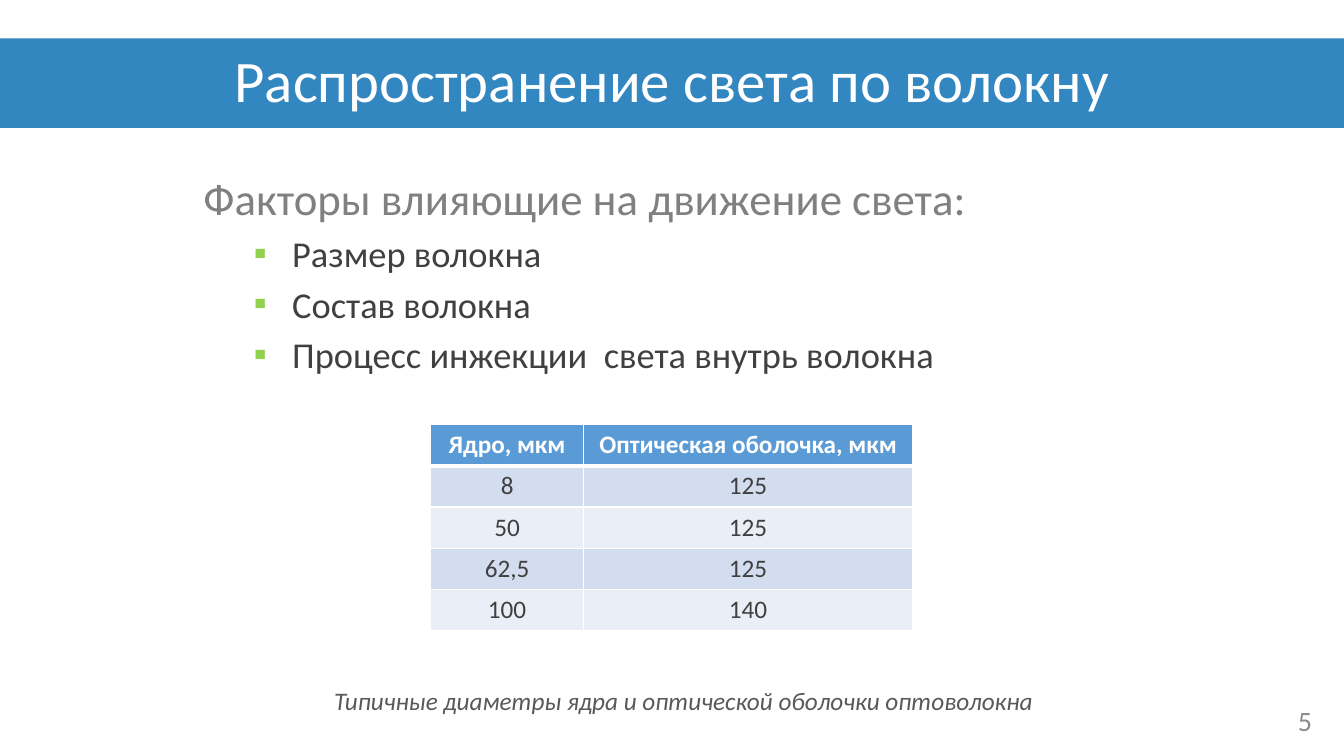
"""Build the slide on how light travels through optical fibre."""
from dataclasses import dataclass

from lxml import etree
from pptx import Presentation
from pptx.dml.color import RGBColor
from pptx.enum import shapes, text
from pptx.oxml import ns
from pptx.util import Inches, Pt

ALIGN = text.PP_ALIGN
ANCHOR = text.MSO_ANCHOR


@dataclass(frozen=True)
class Style:
    size: int
    color: str
    bold: bool = False
    italic: bool = False
    align: ALIGN = ALIGN.LEFT
    before: int = 0
    spacing: float = 1.0
    bullet: str = ""


@dataclass(frozen=True)
class Block:
    left: float
    top: float
    width: float
    height: float
    style: Style
    lines: tuple[str, ...]
    anchor: ANCHOR = ANCHOR.TOP
    fill: str = ""


HEADING = Style(32, "808080", before=10)
FACTOR = Style(26, "404040", before=5, bullet="▪")
TITLE = Style(42, "FFFFFF", align=ALIGN.CENTER, spacing=0.9)
NUMBER = Style(20, "8C8C8C", align=ALIGN.RIGHT)
CAPTION = Style(18, "595959", italic=True, align=ALIGN.CENTER)
HEADER_CELL = Style(18, "FFFFFF", bold=True, align=ALIGN.CENTER)
BODY_CELL = Style(18, "404040", align=ALIGN.CENTER)

FACTORS = ("Размер волокна", "Состав волокна", "Процесс инжекции  света внутрь волокна")
BODY = Block(1.92, 1.64, 9.97, 2.81, HEADING, ("Факторы влияющие на движение света:",))
BLOCKS = (
    Block(9.42, 6.95, 3.69, 0.4, NUMBER, ("5",), ANCHOR.MIDDLE),
    Block(0, 0.38, 13.33, 0.89, TITLE, ("Распространение света по волокну",),
          ANCHOR.MIDDLE, "3387C1"),
    Block(1.79, 6.75, 9.98, 0.4, CAPTION,
          ("Типичные диаметры ядра и оптической оболочки оптоволокна",)),
)
DIAMETERS = (
    ("Ядро, мкм", "Оптическая оболочка, мкм"),
    ("8", "125"),
    ("50", "125"),
    ("62,5", "125"),
    ("100", "140"),
)
COLUMN_WIDTHS = (1.52, 3.26)
ROW_HEIGHT = 0.41
BAND_FILLS = ("EAEFF7", "D2DEEF")


def rgb(value: str) -> RGBColor:
    return RGBColor.from_string(value)


def add_bullet(para, char: str) -> None:
    props = para._p.get_or_add_pPr()
    props.set("marL", str(Inches(0.88)))
    props.set("indent", str(Inches(-0.38)))
    color = etree.SubElement(props, ns.qn("a:buClr"))
    etree.SubElement(color, ns.qn("a:srgbClr"), val="92D050")
    etree.SubElement(props, ns.qn("a:buFont"), typeface="Calibri")
    etree.SubElement(props, ns.qn("a:buChar"), char=char)


def write(para, line: str, style: Style) -> None:
    para.alignment = style.align
    para.space_before = Pt(style.before)
    para.line_spacing = style.spacing
    if style.bullet:
        para.level = 1
        add_bullet(para, style.bullet)
    span = para.add_run()
    span.text = line
    span.font.name = "Calibri"
    span.font.size = Pt(style.size)
    span.font.bold = style.bold
    span.font.italic = style.italic
    span.font.color.rgb = rgb(style.color)


def add_block(page, block: Block):
    place = [Inches(n) for n in (block.left, block.top, block.width, block.height)]
    if block.fill:
        box = page.shapes.add_shape(shapes.MSO_SHAPE.RECTANGLE, *place)
        box.shadow.inherit = False
        box.fill.solid()
        box.fill.fore_color.rgb = rgb(block.fill)
        box.line.fill.background()
    else:
        box = page.shapes.add_textbox(*place)
    frame = box.text_frame
    frame.word_wrap = True
    frame.vertical_anchor = block.anchor
    for index, line in enumerate(block.lines):
        para = frame.add_paragraph() if index else frame.paragraphs[0]
        write(para, line, block.style)
    return frame


def set_borders(cell, bottom: int) -> None:
    props = cell._tc.get_or_add_tcPr()
    widths = {"a:lnL": 1, "a:lnR": 1, "a:lnT": 1, "a:lnB": bottom}
    for index, (tag, width) in enumerate(widths.items()):
        line = etree.Element(ns.qn(tag), w=str(Pt(width)))
        fill = etree.SubElement(line, ns.qn("a:solidFill"))
        etree.SubElement(fill, ns.qn("a:srgbClr"), val="FFFFFF")
        props.insert(index, line)


def add_diameters(page) -> None:
    rows = len(DIAMETERS)
    table = page.shapes.add_table(
        rows, len(COLUMN_WIDTHS), Inches(4.27), Inches(4.21),
        Inches(sum(COLUMN_WIDTHS)), Inches(rows * ROW_HEIGHT)).table
    for column, width in zip(table.columns, COLUMN_WIDTHS):
        column.width = Inches(width)
    for r, values in enumerate(DIAMETERS):
        table.rows[r].height = Inches(ROW_HEIGHT)
        for c, value in enumerate(values):
            cell = table.cell(r, c)
            cell.fill.solid()
            cell.fill.fore_color.rgb = rgb(BAND_FILLS[r % 2] if r else "5B9BD5")
            set_borders(cell, 1 if r else 3)
            if r == 1:
                cell._tc.tcPr.find(ns.qn("a:lnT")).set("w", str(Pt(3)))
            write(cell.text_frame.paragraphs[0], value, BODY_CELL if r else HEADER_CELL)


def main() -> None:
    deck = Presentation()
    deck.slide_width, deck.slide_height = Inches(13.33), Inches(7.5)
    page = deck.slides.add_slide(deck.slide_layouts[6])
    body = add_block(page, BODY)
    for factor in FACTORS:
        write(body.add_paragraph(), factor, FACTOR)
    for block in BLOCKS:
        add_block(page, block)
    add_diameters(page)
    deck.save("out.pptx")


if __name__ == "__main__":
    main()
